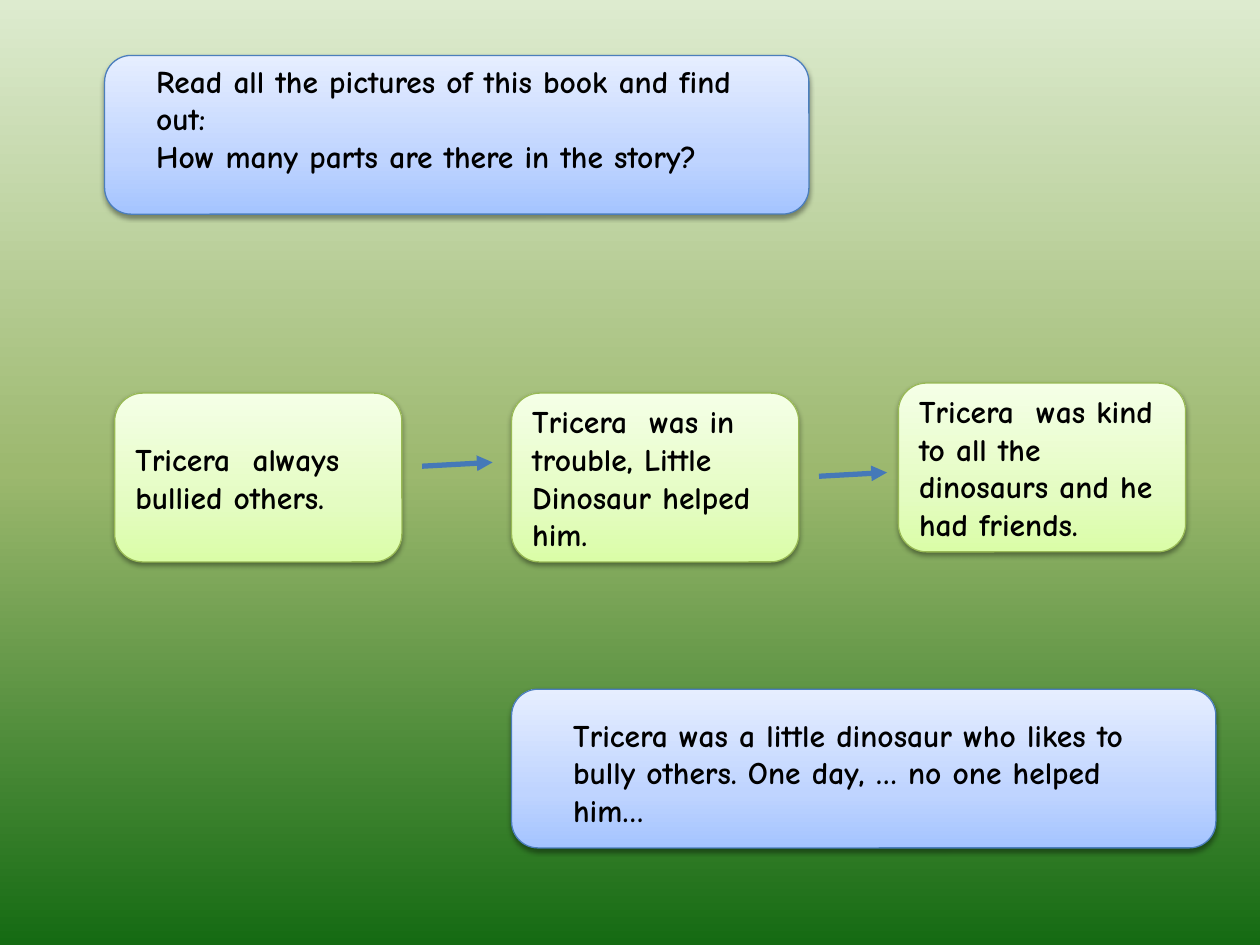
from lxml import etree
from pptx import Presentation
from pptx import util as u
from pptx.dml.color import RGBColor
from pptx.enum import shapes, text
from pptx.oxml import ns

FONT = "Comic Neue"
SKY = [(0, "DDEBCF"), (50, "9CB86E"), (100, "156B13")]
BLUE = [(0, "A4C4FF"), (35, "BFD4FF"), (100, "E6EEFF")], "4B7EBC"
GREEN = [(0, "DAFDA7"), (35, "E4FCC2"), (100, "F5FFE7")], "98B955"
WIDE = 5.59, 1.26
SMALL = 2.28, 1.34
PANELS = [
    ((0.83, 0.44), (1.14, 0.44, 4.88, 1.31),
     ["Read all the pictures of this book and find out:",
      "How many parts are there in the story?"]),
    ((4.06, 5.47), (4.45, 5.63, 4.88, 1.01),
     ["Tricera was a little dinosaur who likes to bully others. "
      "One day, … no one helped him…"]),
]
PARTS = [
    ((0.91, 3.12), "Tricera  always bullied others."),
    ((4.06, 3.12), "Tricera  was in trouble, Little Dinosaur helped him."),
    ((7.13, 3.04),
     "Tricera  was kind to all the dinosaurs and he had friends."),
]
ARROWS = [(3.35, 3.7, 3.91, 3.67), (6.5, 3.78, 7.04, 3.75)]


def inches(*nums):
    return [u.Inches(n) for n in nums]


def color(code):
    return RGBColor.from_string(code)


def add(node, tag, **attrs):
    return etree.SubElement(node, ns.qn(tag), attrs)


def shade(fill, root, stops, angle):
    fill.gradient()
    grad = next(root.iter(ns.qn("a:gradFill")))
    grad.find(ns.qn("a:lin")).set("ang", str(angle * 60000))
    group = grad.find(ns.qn("a:gsLst"))
    for old in list(group):
        group.remove(old)
    for spot, code in stops:
        stop = add(group, "a:gs", pos=str(spot * 1000))
        add(stop, "a:srgbClr", val=code)


def write(shape, lines, size=18, bold=True, ink="000000",
          anchor=text.MSO_ANCHOR.TOP):
    frame = shape.text_frame
    frame.word_wrap = True
    frame.vertical_anchor = anchor
    for i, line in enumerate(lines):
        para = frame.add_paragraph() if i else frame.paragraphs[0]
        para.alignment = text.PP_ALIGN.LEFT
        run = para.add_run()
        run.text = line
        run.font.name = FONT
        run.font.size = u.Pt(size)
        run.font.bold = bold
        run.font.color.rgb = color(ink)


def card(slide, spot, size, style):
    stops, edge = style
    shape = slide.shapes.add_shape(
        shapes.MSO_SHAPE.ROUNDED_RECTANGLE, *inches(*spot, *size))
    shade(shape.fill, shape.element.spPr, stops, 270)
    shape.line.color.rgb = color(edge)
    shape.line.width = u.Pt(0.75)
    shape.shadow.inherit = False
    effects = shape.element.spPr.find(ns.qn("a:effectLst"))
    glow = add(effects, "a:outerShdw", blurRad=str(u.Pt(3.1)),
               dist=str(u.Pt(1.6)), dir="5400000", rotWithShape="0")
    add(add(glow, "a:srgbClr", val="000000"), "a:alpha", val="38000")
    return shape


def arrow(slide, ends):
    link = slide.shapes.add_connector(
        shapes.MSO_CONNECTOR.STRAIGHT, *inches(*ends))
    link.line.color.rgb = color("4579B8")
    link.line.width = u.Pt(3)
    props = link.element.spPr
    add(props.find(ns.qn("a:ln")), "a:tailEnd", type="triangle")
    add(props, "a:effectLst")


def main():
    deck = Presentation()
    deck.slide_width, deck.slide_height = inches(10, 7.5)
    slide = deck.slides.add_slide(deck.slide_layouts[6])
    shade(slide.background.fill, slide.element, SKY, 90)
    for spot, area, lines in PANELS:
        card(slide, spot, WIDE, BLUE)
        write(slide.shapes.add_textbox(*inches(*area)), lines)
    for spot, line in PARTS:
        write(card(slide, spot, SMALL, GREEN), [line],
              anchor=text.MSO_ANCHOR.MIDDLE)
    for ends in ARROWS:
        arrow(slide, ends)
    deck.save("out.pptx")


if __name__ == "__main__":
    main()
